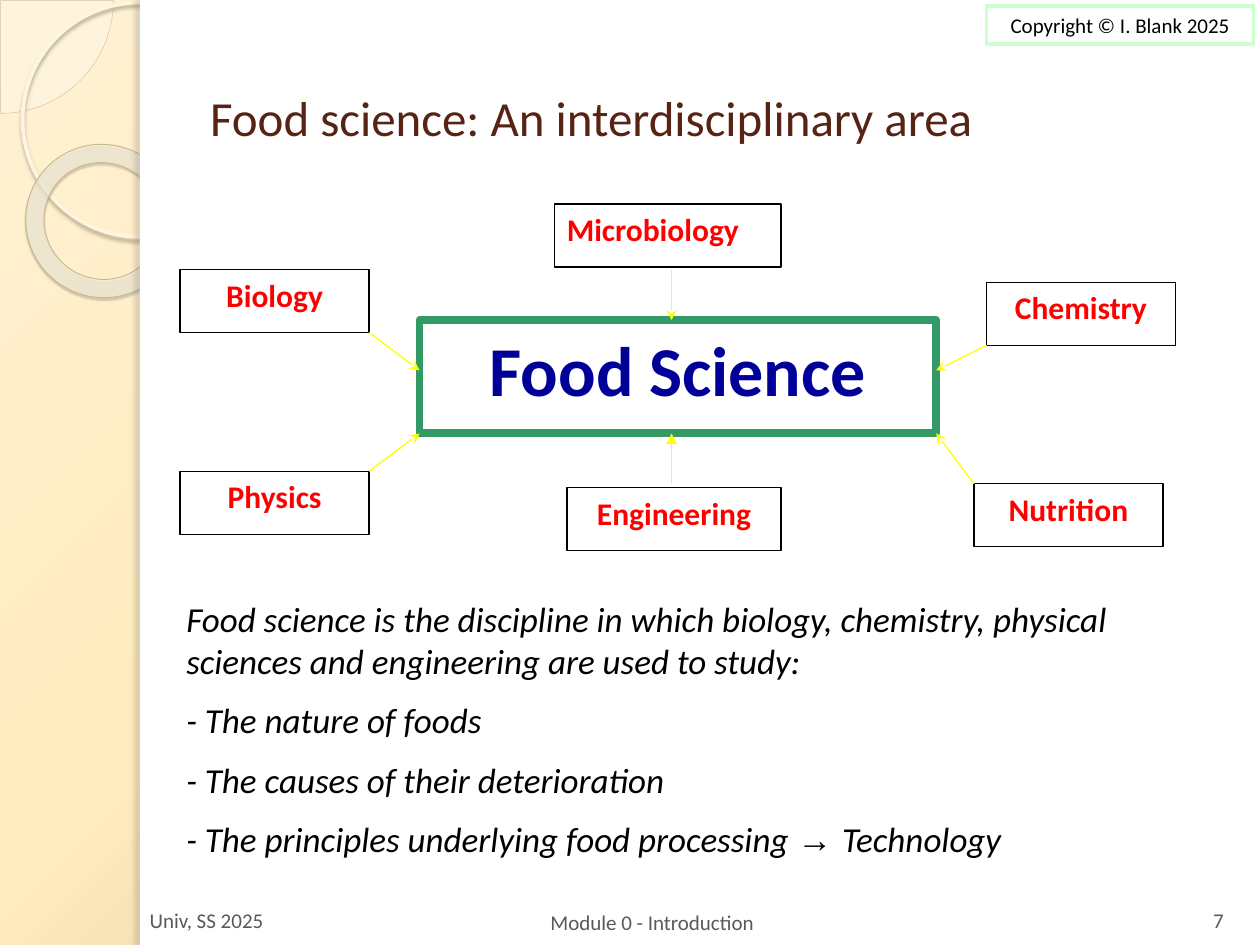
import pptx
import pptx.util
import pptx.dml.color
import pptx.enum.shapes
import pptx.enum.text
import pptx.oxml
import pptx.oxml.ns
from dataclasses import dataclass

Inches, Pt = pptx.util.Inches, pptx.util.Pt
SHAPE = pptx.enum.shapes.MSO_SHAPE
ALIGN = pptx.enum.text.PP_ALIGN
ANCHOR = pptx.enum.text.MSO_ANCHOR
qn = pptx.oxml.ns.qn
NS = pptx.oxml.ns.nsdecls("a")


@dataclass(frozen=True)
class Theme:
    font: str = "Calibri"
    symbol_font: str = "Arial"
    white: str = "FFFFFF"
    black: str = "000000"
    title: str = "572314"
    hub: str = "000099"
    hub_line: str = "339966"
    subject: str = "FF0000"
    arrow: str = "FFFF00"
    notice_line: str = "CCFFCC"
    footer: str = "595959"
    small: int = 12
    label: int = 18
    body: int = 20
    heading: int = 28
    hero: int = 40


@dataclass(frozen=True)
class Box:
    x: float
    y: float
    w: float
    h: float

    def sub(self, x, y, w, h):
        return Box(self.x + x, self.y + y, w, h)

    def emu(self):
        return [Inches(v) for v in (self.x, self.y, self.w, self.h)]


T = Theme()


def rgb(value):
    return pptx.dml.color.RGBColor.from_string(value)


def add_shape(s, kind, box, fill=None, line=None, width=0.75, alpha=None, shadow=None):
    sp = s.shapes.add_shape(kind, *box.emu())
    sp.shadow.inherit = False
    if fill:
        sp.fill.solid()
        sp.fill.fore_color.rgb = rgb(fill)
    else:
        sp.fill.background()
    if alpha:
        color = sp.element.spPr.find(qn("a:solidFill"))[0]
        color.append(pptx.oxml.parse_xml(f'<a:alpha {NS} val="{alpha * 1000}"/>'))
    if line:
        sp.line.color.rgb = rgb(line)
        sp.line.width = Pt(width)
    else:
        sp.line.fill.background()
    if shadow:
        color, opacity, blur, dist, angle = shadow
        sp.element.spPr.find(qn("a:effectLst")).append(pptx.oxml.parse_xml(
            f'<a:outerShdw {NS} blurRad="{Pt(blur)}" dist="{Pt(dist)}" dir="{angle * 60000}" '
            f'algn="ctr" rotWithShape="0"><a:srgbClr val="{color}">'
            f'<a:alpha val="{opacity * 1000}"/></a:srgbClr></a:outerShdw>'))
    return sp


def set_text(sp, text, size, color, align=ALIGN.LEFT, anchor=ANCHOR.TOP, bold=False):
    tf = sp.text_frame
    tf.word_wrap = True
    tf.vertical_anchor = anchor
    p = tf.paragraphs[0]
    p.text = text
    style(p, size, color, align, bold)


def style(p, size, color, align=ALIGN.LEFT, bold=False, italic=False):
    p.alignment = align
    p.font.name = T.font
    p.font.size = Pt(size)
    p.font.color.rgb = rgb(color)
    p.font.bold = bold
    p.font.italic = italic


def add_text(s, box, *args, **kwargs):
    set_text(s.shapes.add_textbox(*box.emu()), *args, **kwargs)


def add_arrow(s, box, start, end, head):
    points = [Inches(v) for v in (box.x + start[0], box.y + start[1],
                                  box.x + end[0], box.y + end[1])]
    c = s.shapes.add_connector(pptx.enum.shapes.MSO_CONNECTOR.STRAIGHT, *points)
    c.line.color.rgb = rgb(T.arrow)
    c.line.width = Pt(0.75)
    c.line._get_or_add_ln().append(pptx.oxml.parse_xml(f'<a:tailEnd {NS} type="{head}"/>'))
    c.element.spPr.append(pptx.oxml.parse_xml(f"<a:effectLst {NS}/>"))


def backdrop(s, box):
    s.background.fill.gradient()
    grad = s.background.fill._fill._gradFill
    stops = "".join(f'<a:gs pos="{pos * 1000}"><a:srgbClr val="{color}"/></a:gs>'
                    for pos, color in ((0, "FFF1D3"), (40, "FFEBBE"), (100, "C9B484")))
    grad.getparent().replace(grad, pptx.oxml.parse_xml(
        f'<a:gradFill {NS} rotWithShape="1"><a:gsLst>{stops}</a:gsLst><a:path path="circle">'
        '<a:fillToRect l="-24000" t="-20000" r="124000" b="120000"/></a:path></a:gradFill>'))
    pie = add_shape(s, SHAPE.PIE, box.sub(-0.89, -0.89, 1.79, 1.79),
                    "FEFAF4", "D3C39F", 0.25, alpha=33)
    pie.adjustments[0], pie.adjustments[1] = 0, 54.02
    add_shape(s, SHAPE.OVAL, box.sub(0.18, 0.02, 1.86, 1.86), line="FFF5DE", width=2.15,
              shadow=("B0A68F", 85, 2, 2, 90))
    ring = add_shape(s, SHAPE.DONUT, box.sub(0.2, 1.15, 1.23, 1.21), "FBF4E4", "C7B893", 0.58,
                     alpha=62, shadow=("5A5444", 35, 1, 1.2, 75))
    ring.adjustments[0] = 0.12
    ring.rotation = 38.6
    add_shape(s, SHAPE.RECTANGLE, box.sub(1.11, 0, box.w - 1.11, box.h), T.white)
    add_shape(s, SHAPE.RECTANGLE, box.sub(1.11, 0, 0.08, box.h), T.white,
              shadow=("736F63", 25, 3, 3, 180))


def notice(s, box):
    sp = add_shape(s, SHAPE.RECTANGLE, box, line=T.notice_line, width=2)
    set_text(sp, "Copyright © I. Blank 2025", T.small, T.black, ALIGN.CENTER)


def diagram(s, box):
    hub = add_shape(s, SHAPE.RECTANGLE, box.sub(1.9, 0.92, 4.1, 0.9), T.white, T.hub_line, 4.5)
    set_text(hub, "Food Science", T.hero, T.hub, ALIGN.CENTER, bold=True)
    subjects = [
        ("Microbiology", 2.97, 0, 1.8, ALIGN.LEFT, (3.9, 0.52), (3.9, 0.92), "stealth"),
        ("Engineering", 3.07, 2.25, 1.7, ALIGN.CENTER, (3.9, 2.22), (3.9, 1.82), "triangle"),
        ("Biology", 0, 0.52, 1.5, ALIGN.CENTER, (1.5, 1.02), (1.9, 1.32), "stealth"),
        ("Physics", 0, 2.12, 1.5, ALIGN.CENTER, (1.5, 2.12), (1.9, 1.82), "stealth"),
        ("Chemistry", 6.4, 0.62, 1.5, ALIGN.CENTER, (6.4, 1.12), (6, 1.32), "stealth"),
        ("Nutrition", 6.3, 2.22, 1.5, ALIGN.CENTER, (6.3, 2.22), (6, 1.82), "stealth"),
    ]
    for name, x, y, w, align, start, end, head in subjects:
        sp = add_shape(s, SHAPE.RECTANGLE, box.sub(x, y, w, 0.5), T.white, T.black)
        set_text(sp, name, T.label, T.subject, align, bold=True)
        add_arrow(s, box, start, end, head)


def definition(s, box):
    tf = s.shapes.add_textbox(*box.emu()).text_frame
    tf.word_wrap = True
    paragraphs = [
        ["Food science is the discipline in which biology, chemistry, physical "
         "sciences and engineering are used to study:"],
        ["- The nature of foods"],
        ["- The causes of their deterioration"],
        ["- The principles underlying food processing ", "→ ", "Technology"],
    ]
    for i, runs in enumerate(paragraphs):
        p = tf.paragraphs[0] if i == 0 else tf.add_paragraph()
        style(p, T.body, T.black, italic=True)
        p.space_before = Pt(10)
        for text in runs:
            r = p.add_run()
            r.text = text
            r.font.name = T.symbol_font if "→" in text else T.font


def footer(s, box):
    add_text(s, box.sub(0, 0, 2.33, 0.36), "Univ, SS 2025", T.small, T.footer,
             anchor=ANCHOR.BOTTOM)
    add_text(s, box.sub(3.18, 0.05, 3.17, 0.36), "Module 0 - Introduction", T.small, T.footer,
             anchor=ANCHOR.MIDDLE)
    add_text(s, box.sub(8.33, 0, 0.5, 0.36), "7", T.small, T.footer, ALIGN.CENTER,
             ANCHOR.BOTTOM)


def main():
    prs = pptx.Presentation()
    prs.slide_width, prs.slide_height = Inches(10), Inches(7.5)
    s = prs.slides.add_slide(prs.slide_layouts[6])
    backdrop(s, Box(0, 0, 10, 7.5))
    notice(s, Box(7.83, 0.05, 2.12, 0.3))
    diagram(s, Box(1.43, 1.62, 7.9, 2.75))
    add_text(s, Box(1.57, 0.3, 8.2, 1.25), "Food science: An interdisciplinary area",
             T.heading, T.title, anchor=ANCHOR.MIDDLE)
    definition(s, Box(1.38, 4.69, 8.12, 2.29))
    footer(s, Box(1.09, 7.09, 8.83, 0.41))
    prs.save("out.pptx")


if __name__ == "__main__":
    main()
